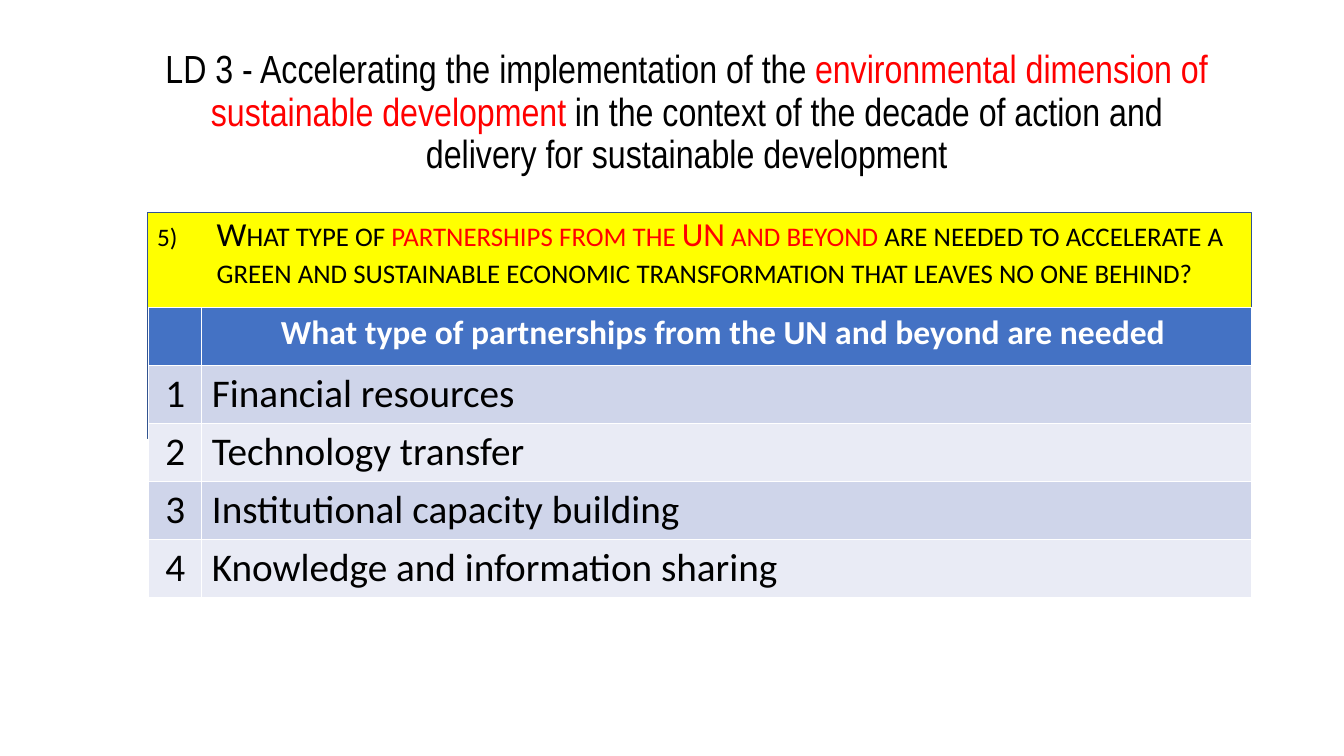
from lxml import etree
from pptx import Presentation
from pptx.dml.color import RGBColor
from pptx.enum.shapes import MSO_SHAPE
from pptx.enum.text import MSO_ANCHOR, PP_ALIGN
from pptx.oxml.ns import qn
from pptx.util import Pt

RECT = MSO_SHAPE.RECTANGLE
MIDDLE = MSO_ANCHOR.MIDDLE
CENTER, LEFT = PP_ALIGN.CENTER, PP_ALIGN.LEFT
BLACK, RED, WHITE = "000000", "FF0000", "FFFFFF"
ROW = 41.4


def color(code):
    return RGBColor.from_string(code)


def add_run(para, text, size, code, font="Calibri", bold=False):
    run = para.add_run()
    run.text = text
    run.font.size = Pt(size)
    run.font.name = font
    run.font.bold = bold
    run.font.color.rgb = color(code)
    return run


deck = Presentation()
deck.slide_width, deck.slide_height = Pt(960), Pt(540)
slide = deck.slides.add_slide(deck.slide_layouts[6])
shapes = slide.shapes

# Yellow panel
panel = shapes.add_shape(RECT, Pt(105.2), Pt(152), Pt(789), Pt(161.3))
panel.shadow.inherit = False
panel.fill.solid()
panel.fill.fore_color.rgb = color("FFFF00")
panel.line.color.rgb = color("325491")
panel.line.width = Pt(1)

# Numbered question in small caps
box = shapes.add_textbox(Pt(105.2), Pt(152), Pt(789), Pt(383.8))
box.text_frame.word_wrap = True
para = box.text_frame.paragraphs[0]
para.line_spacing = 0.9
para.space_before = Pt(10)
props = para._p.get_or_add_pPr()
props.set("marL", str(Pt(42.5)))
props.set("indent", str(Pt(-42.5)))
etree.SubElement(props, qn("a:buSzPct"), val="75000")
etree.SubElement(props, qn("a:buAutoNum"), type="arabicParenR", startAt="5")
for text, code in [
    ("What type of ", BLACK),
    ("partnerships from the UN and beyond ", RED),
    ("are needed to accelerate a green and sustainable economic "
     "transformation that leaves no one behind?", BLACK),
]:
    run = add_run(para, text, 24, code)
    run.font._element.set("cap", "small")

# Title
title = shapes.add_textbox(Pt(105.2), Pt(28.8), Pt(770.4), Pt(104.4))
title.text_frame.word_wrap = True
title.text_frame.vertical_anchor = MIDDLE
para = title.text_frame.paragraphs[0]
para.alignment = CENTER
para.line_spacing = 0.9
for text, code in [
    ("LD 3 - Accelerating the implementation of the ", BLACK),
    ("environmental dimension of sustainable development ", RED),
    ("in the context of the decade of action and delivery for "
     "sustainable development", BLACK),
]:
    add_run(para, text, 28, code, "Arial Narrow")

# Table of needs; the default table style draws the white borders
needs = ["Financial resources", "Technology transfer",
         "Institutional capacity building", "Knowledge and information sharing"]
rows = [("", "What type of partnerships from the UN and beyond are needed ")]
rows += [(str(num), need) for num, need in enumerate(needs, 1)]
frame = shapes.add_table(len(rows), 2, Pt(106.2), Pt(219.6),
                         Pt(788), Pt(ROW * len(rows)))
table = frame.table
table.columns[0].width = Pt(38)
table.columns[1].width = Pt(750)
for r, row in enumerate(rows):
    table.rows[r].height = Pt(ROW)
    head = r == 0
    band = "4472C4" if head else ("E9EBF5", "CFD5EA")[r % 2]
    for c, text in enumerate(row):
        cell = table.cell(r, c)
        cell.fill.solid()
        cell.fill.fore_color.rgb = color(band)
        para = cell.text_frame.paragraphs[0]
        para.alignment = CENTER if head or c == 0 else LEFT
        if text:
            add_run(para, text, 24 if head else 28,
                    WHITE if head else BLACK, bold=head)

deck.save("out.pptx")
